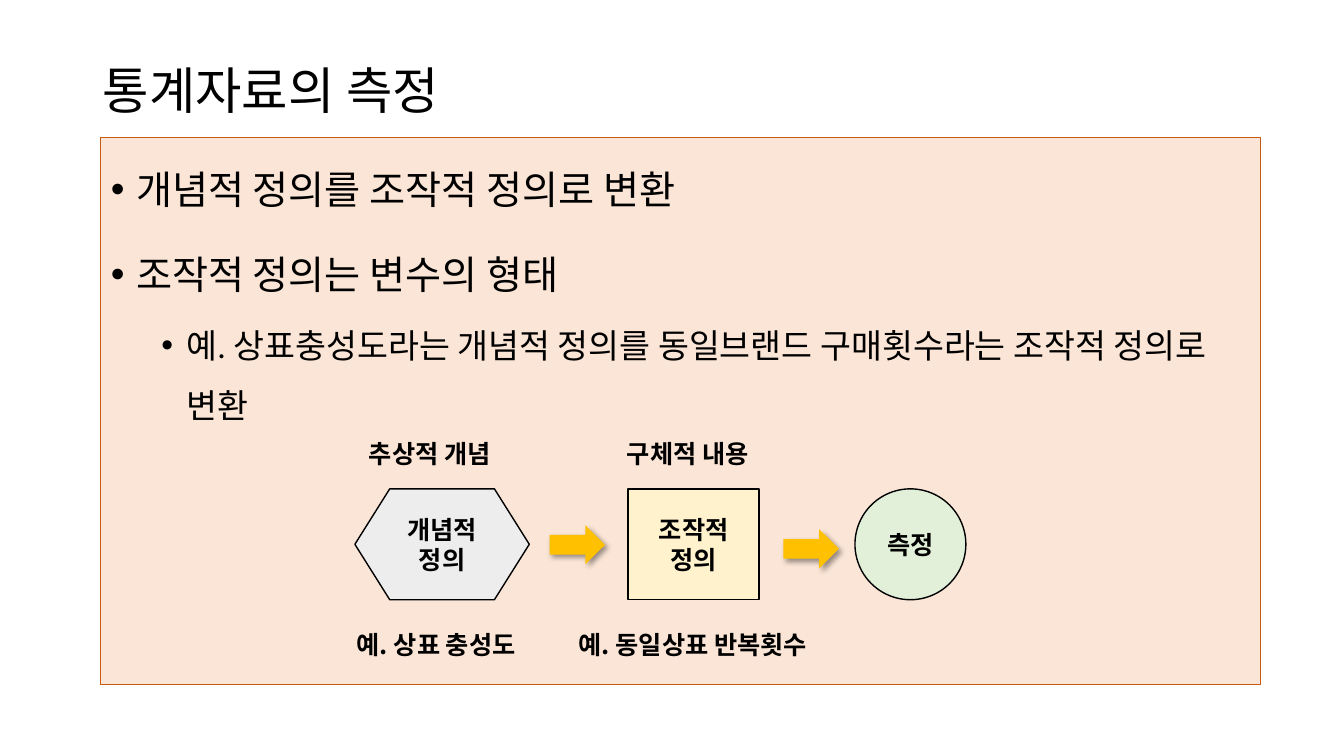
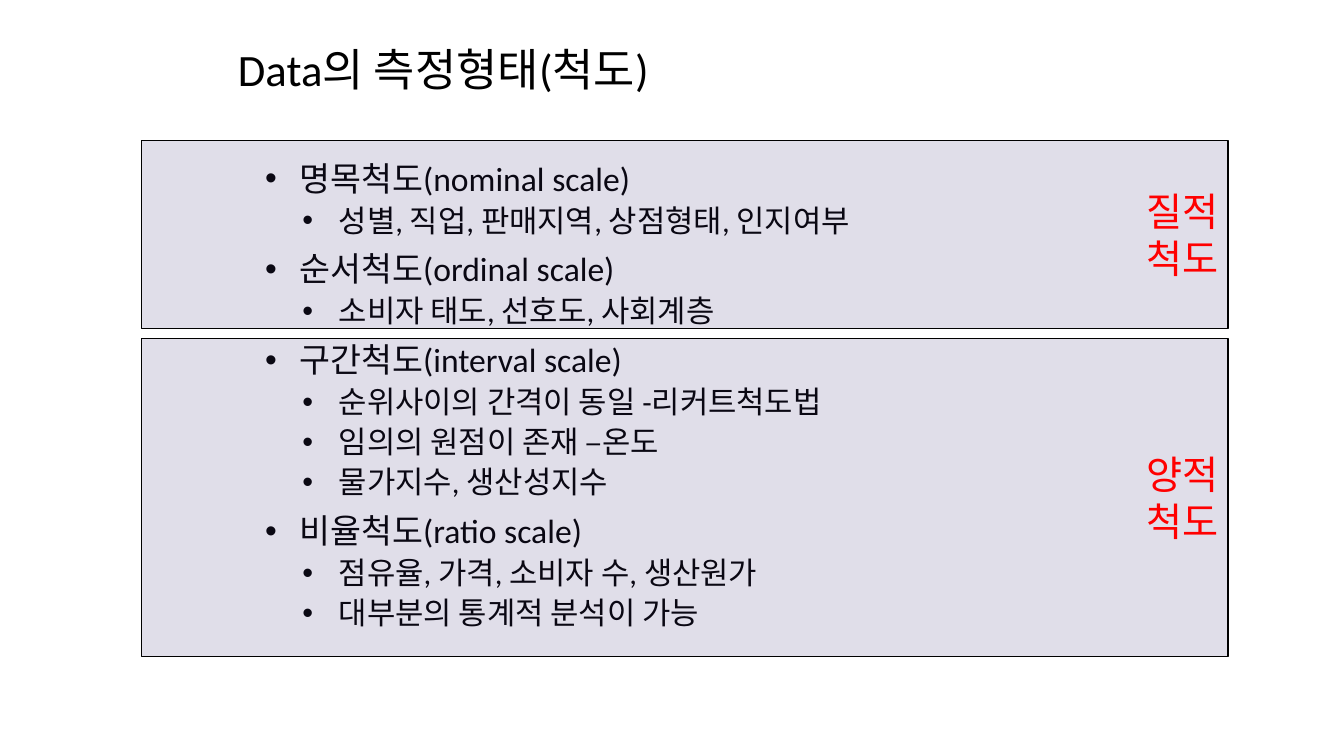
from lxml import etree
from pptx import Presentation
from pptx.dml.color import RGBColor
from pptx.enum.shapes import MSO_SHAPE
from pptx.enum.text import MSO_ANCHOR, MSO_AUTO_SIZE, PP_ALIGN
from pptx.oxml.ns import qn
from pptx.util import Inches, Pt

HEXAGON = MSO_SHAPE.FLOWCHART_PREPARATION
RECT = MSO_SHAPE.RECTANGLE
OVAL = MSO_SHAPE.OVAL
ARROW = MSO_SHAPE.RIGHT_ARROW
MIDDLE, TOP = MSO_ANCHOR.MIDDLE, MSO_ANCHOR.TOP
LEFT, CENTER, RIGHT = PP_ALIGN.LEFT, PP_ALIGN.CENTER, PP_ALIGN.RIGHT
NO_FIT = MSO_AUTO_SIZE.NONE

BLACK = "000000"
RED = "FF0000"
PEACH = "FBE5D6"
RUST = "C55A11"
AMBER = "FFC000"
PURPLE = "44357C"
LATIN = "Calibri"
DASH = "Arial"
KOREAN = "Noto Sans CJK KR"


def rgb(value):
    return RGBColor.from_string(value)


def add_text(tf, text, size, font=LATIN, color=BLACK, bold=False, align=LEFT):
    p = tf.paragraphs[0]
    if p.runs:
        p = tf.add_paragraph()
    for part in text.partition("–"):
        if part:
            r = p.add_run()
            r.text = part
            if part == "–":
                r.font.name = DASH
    p.alignment = align
    p.font.size = Pt(size)
    p.font.bold = bold
    p.font.color.rgb = rgb(color)
    p.font.name = font
    etree.SubElement(p._p.pPr.find(qn("a:defRPr")), qn("a:ea"), typeface=KOREAN)
    return p


prs = Presentation()
prs.slide_width, prs.slide_height = Inches(13.33), Inches(7.5)

pages = [
    {
        "title": "통계자료의 측정",
        "title_box": (0.92, 0.5, 5.2, 0.84),
        "title_size": 36,
        "body_box": (1, 1.36, 11.5, 5.43),
        "sizes": (28, 24),
        "spacing": 1.5,
        "indents": ((0.25, 0.25), (0.75, 0.25)),
        "items": [
            (0, "개념적 정의를 조작적 정의로 변환"),
            (0, "조작적 정의는 변수의 형태"),
            (1, "예. 상표충성도라는 개념적 정의를 동일브랜드 구매횟수라는 조작적 정의로 변환"),
        ],
    },
    {
        "title": "Data의 측정형태(척도)",
        "title_box": (2.26, 0.44, 8.33, 0.54),
        "title_size": 32,
        "body_box": (2.53, 1.56, 7.95, 5.35),
        "sizes": (24, 22),
        "spacing": 0.9,
        "indents": ((0.34, 0.34), (0.73, 0.36)),
        "items": [
            (0, "명목척도(nominal scale)"),
            (1, "성별, 직업, 판매지역, 상점형태, 인지여부"),
            (0, "순서척도(ordinal scale)"),
            (1, "소비자 태도, 선호도, 사회계층"),
            (0, "구간척도(interval scale)"),
            (1, "순위사이의 간격이 동일 -리커트척도법"),
            (1, "임의의 원점이 존재 –온도"),
            (1, "물가지수, 생산성지수"),
            (0, "비율척도(ratio scale)"),
            (1, "점유율, 가격, 소비자 수, 생산원가"),
            (1, "대부분의 통계적 분석이 가능"),
        ],
    },
]

slides = []
for page in pages:
    s = prs.slides.add_slide(prs.slide_layouts[1])
    slides.append(s)
    title, body = s.shapes.title, s.placeholders[1]
    for sp, box, anchor in ((title, "title_box", MIDDLE), (body, "body_box", TOP)):
        sp.left, sp.top, sp.width, sp.height = map(Inches, page[box])
        sp.text_frame.auto_size = NO_FIT
        sp.text_frame.vertical_anchor = anchor
    p = add_text(title.text_frame, page["title"], page["title_size"])
    p.line_spacing = 0.9
    for level, text in page["items"]:
        p = add_text(body.text_frame, text, page["sizes"][level])
        p.level = level
        p.line_spacing = page["spacing"]
        p.space_before = Pt((10, 5)[level])
        margin, hang = page["indents"][level]
        pPr = p._p.pPr
        pPr.set("marL", str(Inches(margin)))
        pPr.set("indent", str(-Inches(hang)))
        bullet = etree.Element(qn("a:buChar"), char="•")
        pPr.find(qn("a:defRPr")).addprevious(bullet)

definition, scales = slides

panel = definition.placeholders[1]
panel.fill.solid()
panel.fill.fore_color.rgb = rgb(PEACH)
panel.line.color.rgb = rgb(RUST)
panel.line.width = Pt(0.75)

steps = [
    (HEXAGON, 3.52, 1.73, "EDEDED", ["개념적 정의"]),
    (RECT, 6.23, 1.3, "FFF2CC", ["조작적", "정의"]),
    (OVAL, 8.48, 1.1, "E2F0D9", ["측정"]),
]
for kind, x, w, fill, lines in steps:
    sp = definition.shapes.add_shape(kind, Inches(x), Inches(4.85), Inches(w), Inches(1.1))
    sp.shadow.inherit = False
    sp.fill.solid()
    sp.fill.fore_color.rgb = rgb(fill)
    sp.line.color.rgb = rgb(BLACK)
    sp.line.width = Pt(1)
    tf = sp.text_frame
    tf.word_wrap = True
    tf.vertical_anchor = MIDDLE
    for line in lines:
        add_text(tf, line, 18, KOREAN, bold=True, align=CENTER)

for x, y in ((5.45, 5.21), (7.77, 5.25)):
    sp = definition.shapes.add_shape(ARROW, Inches(x), Inches(y), Inches(0.55), Inches(0.39))
    sp.fill.solid()
    sp.fill.fore_color.rgb = rgb(AMBER)
    sp.line.fill.background()
    sp.shadow.inherit = False
    effects = sp._element.spPr.find(qn("a:effectLst"))
    shadow = etree.SubElement(effects, qn("a:outerShdw"), blurRad=str(Pt(4)),
                              dist=str(Pt(3)), dir="2700000", algn="tl", rotWithShape="0")
    color = etree.SubElement(shadow, qn("a:srgbClr"), val=BLACK)
    etree.SubElement(color, qn("a:alpha"), val="40000")

captions = [
    (3.56, 4.3, 1.65, True, "추상적 개념"),
    (6.12, 4.3, 1.65, True, "구체적 내용"),
    (3.44, 6.19, 1.95, False, "예. 상표 충성도"),
    (5.64, 6.19, 2.71, False, "예. 동일상표 반복횟수"),
]
for x, y, w, wrap, text in captions:
    sp = definition.shapes.add_textbox(Inches(x), Inches(y), Inches(w), Inches(0.4))
    sp.text_frame.word_wrap = wrap
    add_text(sp.text_frame, text, 18, KOREAN, bold=True)

for y, h, kind in ((1.39, 1.87, "질적"), (3.36, 3.15, "양적")):
    sp = scales.shapes.add_shape(RECT, Inches(1.4), Inches(y), Inches(10.78), Inches(h))
    sp.shadow.inherit = False
    sp.fill.solid()
    sp.fill.fore_color.rgb = rgb(PURPLE)
    color = sp._element.spPr.find(qn("a:solidFill")).find(qn("a:srgbClr"))
    etree.SubElement(color, qn("a:alpha"), val="16000")
    sp.line.color.rgb = rgb(BLACK)
    sp.line.width = Pt(0.75)
    tf = sp.text_frame
    tf.word_wrap = True
    tf.vertical_anchor = MIDDLE
    for line in (kind, "척도"):
        add_text(tf, line, 28, "Arial", RED, align=RIGHT)

prs.save("out.pptx")
